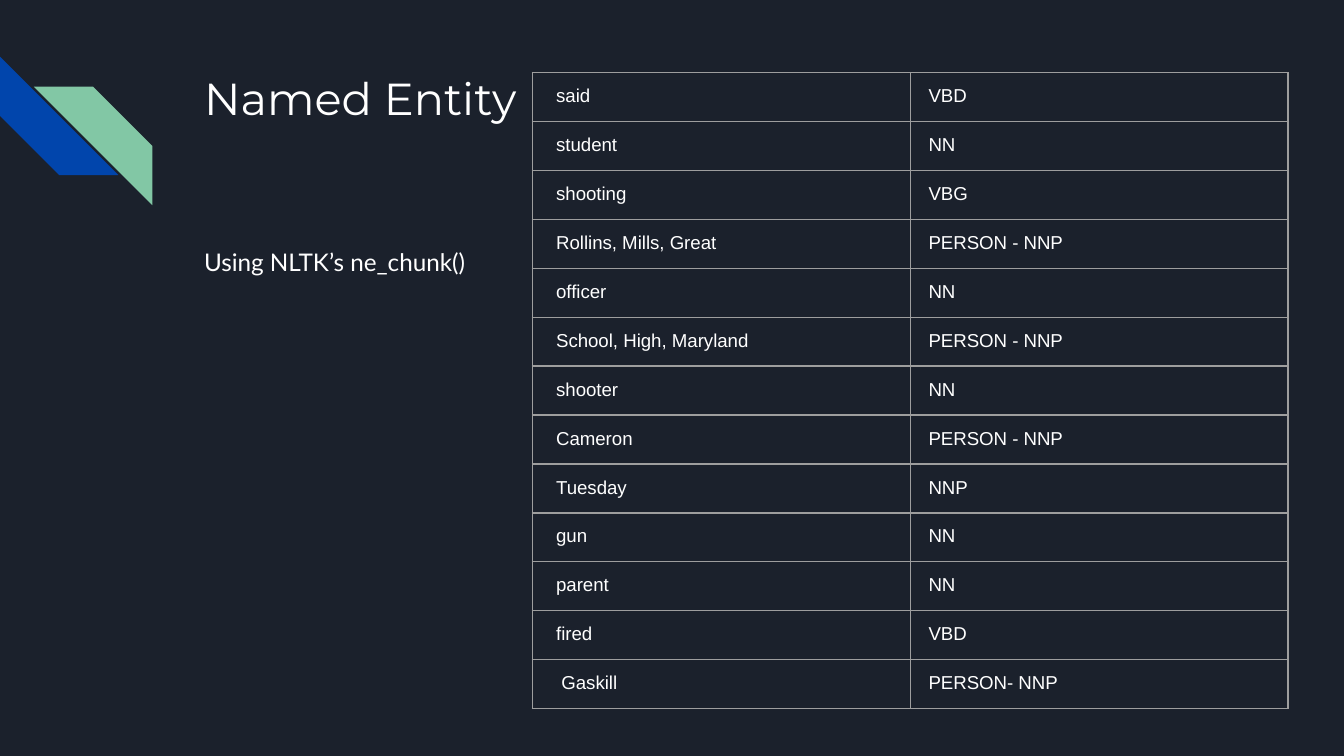
from lxml import etree
from pptx import Presentation
from pptx.dml.color import RGBColor
from pptx.enum.shapes import MSO_SHAPE
from pptx.oxml.ns import qn
from pptx.util import Cm, Pt

STRIPE = MSO_SHAPE.DIAGONAL_STRIPE
COLORS = {"night": "1B212C", "blue": "0145AC", "green": "82C7A5",
          "white": "FFFFFF", "grid": "9E9E9E"}
INSET = 0.25
TITLE = {"name": "Montserrat", "size": Pt(24)}
BODY = {"name": "Lato", "size": Pt(13)}
CELL = {"name": "Arial", "size": Pt(10)}
WORD_TAGS = [
    ("said", "VBD"),
    ("student", "NN"),
    ("shooting", "VBG"),
    ("Rollins, Mills, Great", "PERSON - NNP"),
    ("officer", "NN"),
    ("School, High, Maryland", "PERSON - NNP"),
    ("shooter", "NN"),
    ("Cameron", "PERSON - NNP"),
    ("Tuesday", "NNP"),
    ("gun", "NN"),
    ("parent", "NN"),
    ("fired", "VBD"),
    ("Gaskill", "PERSON- NNP"),
]


def rgb(name):
    return RGBColor.from_string(COLORS[name])


def set_format(target, values):
    for name, value in values.items():
        setattr(target, name, value)


def write(para, text, style):
    span = para.add_run()
    span.text = text
    set_format(span.font, style)
    span.font.color.rgb = rgb("white")


def add_stripes(page, left, top, size):
    """Two interlocking stripes, the second shifted right and down."""
    for color, dx, dy, turn in (("blue", 0, 0, 270), ("green", 0.64, 0.57, 90)):
        stripe = page.shapes.add_shape(STRIPE, Cm(left + dx), Cm(top + dy), Cm(size), Cm(size))
        stripe.rotation = turn
        stripe.shadow.inherit = False
        stripe.fill.solid()
        stripe.fill.fore_color.rgb = rgb(color)
        stripe.line.fill.background()


def add_text(page, left, top, width, height, text, style, spacing):
    box = page.shapes.add_textbox(Cm(left), Cm(top), Cm(width), Cm(height))
    frame = box.text_frame
    set_format(frame, {"word_wrap": True, "margin_left": Cm(INSET), "margin_right": Cm(INSET),
                       "margin_top": Cm(INSET), "margin_bottom": Cm(INSET)})
    para = frame.paragraphs[0]
    set_format(para, spacing)
    write(para, text, style)


def add_borders(cell):
    properties = cell._tc.get_or_add_tcPr()
    for index, side in enumerate(("a:lnL", "a:lnR", "a:lnT", "a:lnB")):
        line = etree.Element(qn(side), w=str(Pt(0.75)))
        fill = etree.SubElement(line, qn("a:solidFill"))
        etree.SubElement(fill, qn("a:srgbClr"), val=COLORS["grid"])
        properties.insert(index, line)


def add_tag_table(page, left, top, width, row_height):
    count = len(WORD_TAGS)
    table = page.shapes.add_table(count, 2, Cm(left), Cm(top), Cm(width),
                                  Cm(row_height * count)).table
    set_format(table, {"first_row": False, "horz_banding": False})
    for column in table.columns:
        column.width = Cm(width / 2)
    for row, pair in zip(table.rows, WORD_TAGS):
        row.height = Cm(row_height)
        for cell, text, indent in zip(row.cells, pair, (0.45, 0.35)):
            if text == "Gaskill":
                indent += 0.1
            set_format(cell, {"margin_left": Cm(indent), "margin_right": Cm(INSET),
                              "margin_top": Cm(INSET), "margin_bottom": Cm(INSET)})
            cell.fill.background()
            add_borders(cell)
            write(cell.text_frame.paragraphs[0], text, CELL)


def build_entity_slide(deck):
    page = deck.slides.add_slide(deck.slide_layouts[6])
    page.background.fill.solid()
    page.background.fill.fore_color.rgb = rgb("night")
    add_stripes(page, 0, 1.07, 2.24)
    add_text(page, 3.61, 1.09, 19.56, 2.54, "Named Entity", TITLE, {})
    add_text(page, 3.61, 4.34, 6.45, 8.08, "Using NLTK’s ne_chunk()", BODY,
             {"line_spacing": 1.15, "space_after": Pt(16)})
    add_tag_table(page, 10.06, 1.37, 14.28, 0.9)


def main():
    deck = Presentation()
    set_format(deck, {"slide_width": Cm(25.4), "slide_height": Cm(14.29)})
    build_entity_slide(deck)
    deck.save("out.pptx")


if __name__ == "__main__":
    main()
